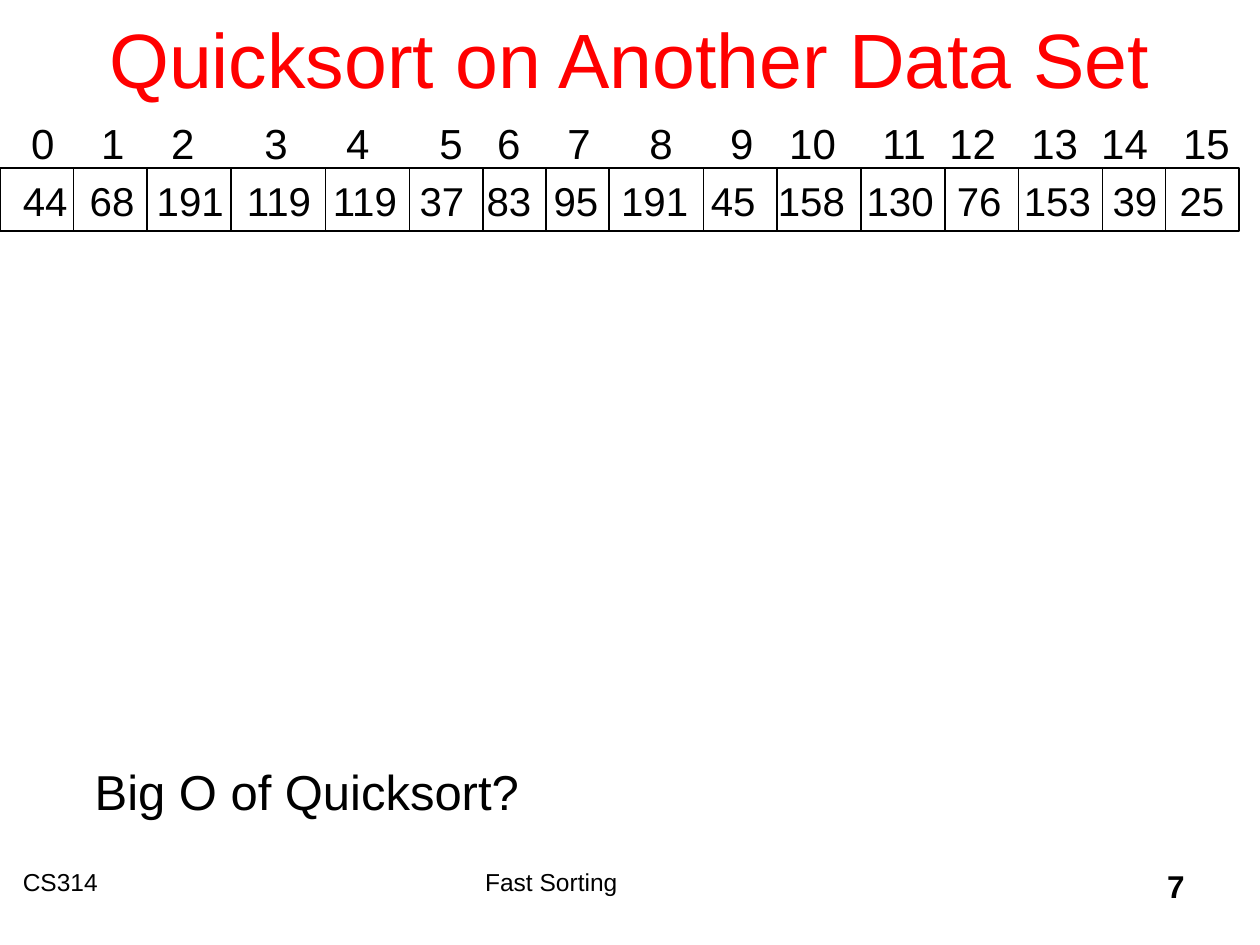
from dataclasses import dataclass
from itertools import accumulate

from lxml import etree
from pptx import Presentation
from pptx.dml.color import RGBColor
from pptx.enum.shapes import MSO_CONNECTOR, MSO_SHAPE
from pptx.enum.text import MSO_ANCHOR, MSO_AUTO_SIZE, PP_ALIGN
from pptx.oxml.ns import qn
from pptx.util import Cm, Pt

LEFT, CENTER, RIGHT = PP_ALIGN.LEFT, PP_ALIGN.CENTER, PP_ALIGN.RIGHT
MIDDLE = MSO_ANCHOR.MIDDLE
FIT_SHAPE, NO_FIT = MSO_AUTO_SIZE.SHAPE_TO_FIT_TEXT, MSO_AUTO_SIZE.NONE
RECTANGLE, STRAIGHT = MSO_SHAPE.RECTANGLE, MSO_CONNECTOR.STRAIGHT


@dataclass(frozen=True)
class Theme:
    """Font, colours and sizes of the slide."""
    font: str = "Arial"
    ink: RGBColor = RGBColor(0, 0, 0)
    accent: RGBColor = RGBColor(255, 0, 0)
    title: int = 44
    question: int = 28
    index: int = 24
    value: int = 23
    number: int = 18
    footer: int = 14
    line: float = 0.75


THEME = Theme()
VALUES = (44, 68, 191, 119, 119, 37, 83, 95, 191, 45, 158, 130, 76, 153, 39, 25)
VALUE_TABS = (1.35, 2.7, 4.52, 6.25, 8, 9.35, 10.7, 12.06, 13.87, 15.22,
              17.01, 18.83, 20.18, 21.97, 23.32)
INDEX_TABS = (1.41, 2.82, 4.7, 6.35, 8.23, 9.39, 10.81, 12.46, 14.09, 15.28,
              17.16, 18.51, 20.16, 21.57, 23.22)
CELL_UNITS = (7, 7, 8, 9, 8, 7, 6, 6, 9, 7, 8, 8, 7, 8, 6, 7)
UNIT = 2.54 / 12
ARRAY_TOP, ARRAY_HEIGHT = 3.39, 1.27


def add_run(p, text, size, color=THEME.ink, bold=False):
    """Append a formatted run to a paragraph."""
    r = p.add_run()
    r.text = text
    r.font.name, r.font.size, r.font.bold = THEME.font, Pt(size), bold
    r.font.color.rgb = color


def set_title(s, text):
    """Place and fill the title placeholder."""
    sp = s.shapes.title
    sp.left, sp.top, sp.width, sp.height = Cm(1.9), Cm(-0.42), Cm(21.59), Cm(3.18)
    tf = sp.text_frame
    tf.vertical_anchor, tf.auto_size = MIDDLE, NO_FIT
    p = tf.paragraphs[0]
    p.alignment = CENTER
    add_run(p, text, THEME.title, THEME.accent)


def add_text(s, box, text, size, align=LEFT, bold=False, before=0.0):
    """Add a one-line text box and return its shape."""
    sp = s.shapes.add_textbox(*map(Cm, box))
    tf = sp.text_frame
    tf.word_wrap = True
    p = tf.paragraphs[0]
    p.alignment, p.space_before = align, Pt(before)
    add_run(p, text, size, bold=bold)
    return sp


def add_row(s, box, items, tabs, size):
    """Add a row of numbers aligned on tab stops."""
    sp = add_text(s, box, "\t".join(map(str, items)), size, before=2.4)
    tf = sp.text_frame
    tf.margin_right = 0
    pPr = tf.paragraphs[0]._p.get_or_add_pPr()
    tab_list = etree.SubElement(pPr, qn("a:tabLst"))
    for tab in tabs:
        etree.SubElement(tab_list, qn("a:tab"), pos=str(Cm(tab)), algn="l")


def add_array(s):
    """Draw the array outline and the dividers between its cells."""
    *dividers, right = [UNIT * n for n in accumulate(CELL_UNITS)]
    sp = s.shapes.add_shape(RECTANGLE, 0, Cm(ARRAY_TOP), Cm(right), Cm(ARRAY_HEIGHT))
    sp.shadow.inherit = False
    sp.fill.background()
    sp.line.color.rgb, sp.line.width = THEME.ink, Pt(THEME.line)
    for x in dividers:
        line = s.shapes.add_connector(
            STRAIGHT, Cm(x), Cm(ARRAY_TOP), Cm(x), Cm(ARRAY_TOP + ARRAY_HEIGHT))
        line.line.color.rgb, line.line.width = THEME.ink, Pt(THEME.line)
        etree.SubElement(line._element.spPr, qn("a:effectLst"))


def main():
    """Build the slide and save it."""
    prs = Presentation()
    prs.slide_width, prs.slide_height = Cm(25.4), Cm(19.05)
    s = prs.slides.add_slide(prs.slide_layouts[5])
    add_text(s, (0.21, 17.36, 7.41, 1.27), "CS314", THEME.footer)
    add_text(s, (9.53, 17.36, 8.47, 1.27), "Fast Sorting", THEME.footer)
    add_text(s, (18.84, 17.36, 5.29, 1.27), "7", THEME.number, RIGHT, True)
    set_title(s, "Quicksort on Another Data Set")
    add_row(s, (0.21, 3.43, 24.79, 1.21), VALUES, VALUE_TABS, THEME.value)
    add_array(s)
    add_row(s, (0.38, 2.24, 24.69, 1.27), range(len(VALUES)), INDEX_TABS, THEME.index)
    question = add_text(s, (1.66, 15.22, 9.08, 1.44), "Big O of Quicksort?",
                        THEME.question, before=2.8)
    question.text_frame.word_wrap = False
    question.text_frame.auto_size = FIT_SHAPE
    prs.save("out.pptx")


if __name__ == "__main__":
    main()
